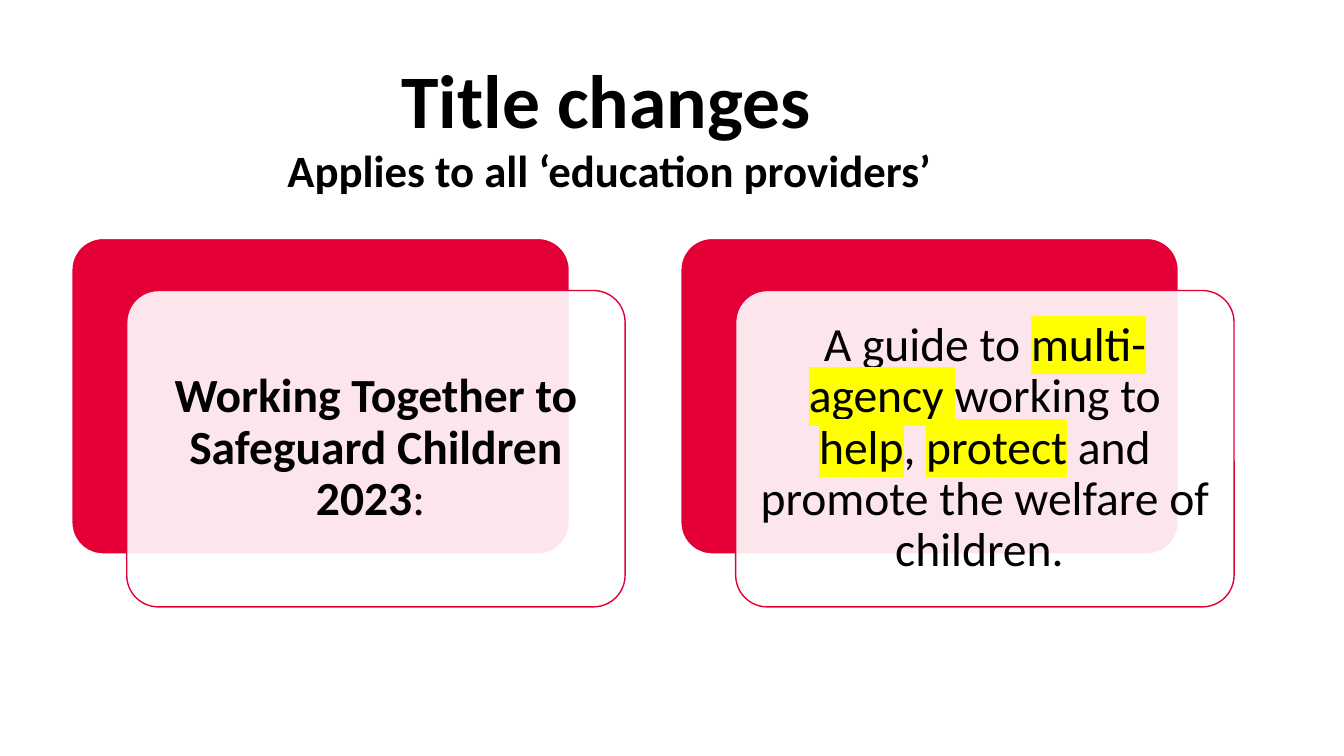
from dataclasses import dataclass

from lxml import etree
from pptx import Presentation
from pptx.dml.color import RGBColor
from pptx.enum.shapes import MSO_SHAPE
from pptx.enum.text import MSO_ANCHOR, PP_ALIGN
from pptx.oxml.ns import qn
from pptx.util import Pt

ROUNDED = MSO_SHAPE.ROUNDED_RECTANGLE
CENTER = PP_ALIGN.CENTER
TOP, MIDDLE = MSO_ANCHOR.TOP, MSO_ANCHOR.MIDDLE


@dataclass(frozen=True)
class Theme:
    font: str = "Calibri"
    ink: str = "000000"
    paper: str = "FFFFFF"
    accent: str = "E40037"
    marker: str = "FFFF00"
    title_size: int = 54
    subtitle_size: int = 32
    body_size: int = 34


class SlideBuilder:
    def __init__(self, slide, theme):
        self.slide = slide
        self.theme = theme

    def style_run(self, run, size, bold=False, highlight=False):
        font = run.font
        font.name, font.size, font.bold = self.theme.font, Pt(size), bold
        font.color.rgb = RGBColor.from_string(self.theme.ink)
        if highlight:
            marker = etree.Element(qn("a:highlight"))
            etree.SubElement(marker, qn("a:srgbClr"), val=self.theme.marker)
            run._r.rPr.find(qn("a:solidFill")).addnext(marker)

    def prepare_frame(self, shape, inset, anchor):
        frame = shape.text_frame
        frame.word_wrap = True
        frame.vertical_anchor = anchor
        frame.margin_left = frame.margin_right = Pt(inset)
        frame.margin_top = frame.margin_bottom = Pt(inset)
        paragraph = frame.paragraphs[0]
        paragraph.alignment = CENTER
        return paragraph

    def title(self, left, top, width, height, heading, subtitle):
        box = self.slide.shapes.add_textbox(Pt(left), Pt(top), Pt(width), Pt(height))
        paragraph = self.prepare_frame(box, 0, TOP)
        paragraph.text = f"{heading}\v{subtitle}"
        sizes = (self.theme.title_size, self.theme.subtitle_size)
        for run, size in zip(paragraph.runs, sizes):
            self.style_run(run, size, bold=True)

    def panel(self, left, top, width, height, fill, line, line_width, opacity=100):
        shape = self.slide.shapes.add_shape(
            ROUNDED, Pt(left), Pt(top), Pt(width), Pt(height))
        shape.shadow.inherit = False
        shape.adjustments[0] = 0.1
        shape.fill.solid()
        shape.fill.fore_color.rgb = RGBColor.from_string(fill)
        shape.line.color.rgb = RGBColor.from_string(line)
        shape.line.width = Pt(line_width)
        if opacity < 100:
            color = shape.fill._xPr.find(qn("a:solidFill"))[0]
            etree.SubElement(color, qn("a:alpha"), val=str(opacity * 1000))
        return shape

    def card(self, left, top, width, height, pieces):
        """Draw a solid panel with an offset text panel; pieces are (text, bold, highlight)."""
        theme = self.theme
        self.panel(left, top, width, height, theme.accent, theme.paper, 1.5)
        front = self.panel(left + 39.5, top + 37.5, width, height,
                           theme.paper, theme.accent, 1, opacity=90)
        paragraph = self.prepare_frame(front, 10, MIDDLE)
        paragraph.line_spacing = 0.9
        for text, bold, highlight in pieces:
            run = paragraph.add_run()
            run.text = text
            self.style_run(run, theme.body_size, bold, highlight)


CARDS = [
    [("Working Together to Safeguard Children 2023", True, False),
     (": ", False, False)],
    [("A guide to ", False, False),
     ("multi- agency ", False, True),
     ("working to ", False, False),
     ("help", False, True),
     (", ", False, False),
     ("protect", False, True),
     (" and promote the welfare of children. ", False, False)],
]


def main():
    presentation = Presentation()
    presentation.slide_width, presentation.slide_height = Pt(960), Pt(540)
    slide = presentation.slides.add_slide(presentation.slide_layouts[6])
    builder = SlideBuilder(slide, Theme())
    builder.title(147.5, 37.5, 583, 83.5, "Title changes ",
                  "Applies to all ‘education providers’ ")
    for index, pieces in enumerate(CARDS):
        builder.card(51 + index * 435, 170, 356, 226, pieces)
    presentation.save("out.pptx")


if __name__ == "__main__":
    main()
